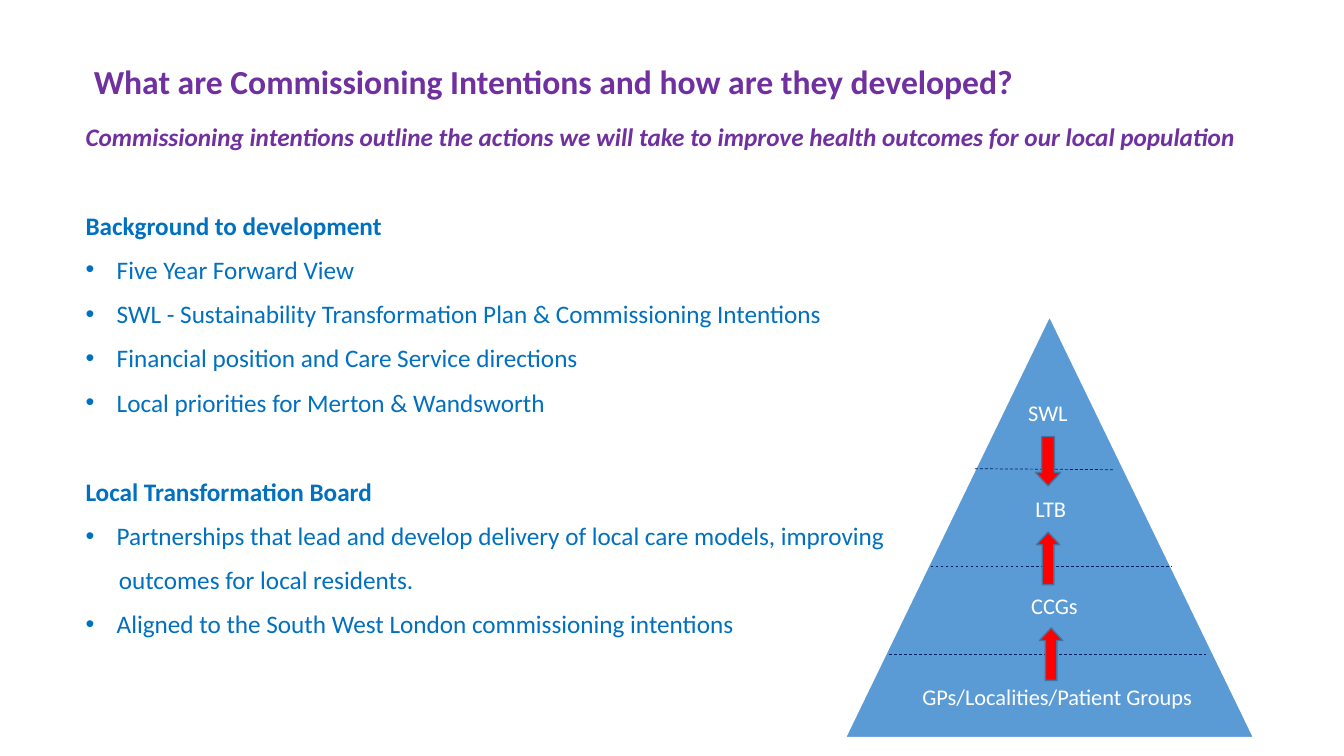
from lxml import etree
from pptx import Presentation
from pptx import util as u
from pptx.dml.color import RGBColor
from pptx.enum import dml, shapes, text
from pptx.oxml.ns import qn

FONT = "Calibri"
PURPLE, BLUE, WHITE = "7030A0", "0070C0", "FFFFFF"
NAVY, RED, EDGE, SKY = "002060", "FF0000", "43739E", "5B9BD5"

LEAD = ("Commissioning intentions outline the actions we will take "
        "to improve health outcomes for our local population")
# Style, wording
BODY = [
    ("lead", LEAD),
    ("head", "Background to development"),
    ("item", "Five Year Forward View"),
    ("item", "SWL - Sustainability Transformation Plan & Commissioning Intentions"),
    ("item", "Financial position and Care Service directions"),
    ("item", "Local priorities for Merton & Wandsworth"),
    ("head", "Local Transformation Board"),
    ("item", "Partnerships that lead and develop delivery of local care models, improving"),
    ("more", "outcomes for local residents."),
    ("item", "Aligned to the South West London commissioning intentions"),
]
# Style: left margin, first-line indent, space before
STYLES = {
    "lead": (0.25, 0, 10),
    "head": (0.25, 0, 42),
    "item": (0.56, -0.31, 10),
    "more": (0.58, 0, 10),
}

# Offsets from the pyramid's top left corner
TIERS = [  # label, left, top, width
    ("SWL", 1.72, 0.78, 0.6),
    ("LTB", 1.79, 1.73, 0.51),
    ("CCGs", 1.75, 2.7, 0.67),
    ("GPs/Localities/Patient Groups", 0.67, 3.6, 3.49),
]
CUTS = [  # left, top, right, bottom
    (1.29, 1.52, 2.67, 1.53),
    (0.85, 2.49, 3.24, 2.49),
    (0.44, 3.36, 3.58, 3.36),
]
ARROWS = [  # left, top, width, height, turn
    (1.89, 1.2, 0.25, 0.49, 0),
    (1.9, 2.15, 0.23, 0.52, 180),
    (1.93, 3.1, 0.23, 0.52, 180),
]


def tint(code):
    return RGBColor.from_string(code)


def inches(*nums):
    return [u.Inches(n) for n in nums]


def style(para, size, color, bold=False, italic=False):
    for run in para.runs:
        font = run.font
        font.name, font.size = FONT, u.Pt(size)
        font.bold, font.italic = bold, italic
        font.color.rgb = tint(color)


def add_title(slide, box):
    title = slide.shapes.title
    title.left, title.top, title.width, title.height = inches(*box)
    frame = title.text_frame
    frame.text = "What are Commissioning Intentions and how are they developed?"
    frame.vertical_anchor = text.MSO_ANCHOR.TOP
    frame.auto_size = text.MSO_AUTO_SIZE.NONE
    para = frame.paragraphs[0]
    para.alignment = text.PP_ALIGN.LEFT
    style(para, 24, PURPLE, bold=True)


def indent(para, margin, first, bullet):
    props = para._p.get_or_add_pPr()
    props.set("marL", str(u.Inches(margin)))
    props.set("indent", str(u.Inches(first)))
    if bullet:
        etree.SubElement(props, qn("a:buFont")).set("typeface", "Arial")
        etree.SubElement(props, qn("a:buChar")).set("char", "•")


def add_body(slide, box):
    frame = slide.shapes.add_textbox(*inches(*box)).text_frame
    frame.word_wrap = True
    for i, (kind, words) in enumerate(BODY):
        para = frame.add_paragraph() if i else frame.paragraphs[0]
        para.text = words
        margin, first, gap = STYLES[kind]
        para.space_before = u.Pt(gap)
        indent(para, margin, first, kind == "item")
        lead = kind == "lead"
        style(para, 18, PURPLE if lead else BLUE, lead or kind == "head", lead)


def add_block(slide, kind, box, fill, line, width):
    block = slide.shapes.add_shape(kind, *inches(*box))
    block.shadow.inherit = False
    block.fill.solid()
    block.fill.fore_color.rgb = tint(fill)
    block.line.color.rgb = tint(line)
    block.line.width = u.Pt(width)
    return block


def add_pyramid(slide, box):
    x, y = box[:2]
    kinds = shapes.MSO_SHAPE
    add_block(slide, kinds.FLOWCHART_EXTRACT, box, SKY, WHITE, 1.5)

    # Dashed dividers
    for left, top, right, bottom in CUTS:
        cut = slide.shapes.add_connector(
            shapes.MSO_CONNECTOR.STRAIGHT,
            *inches(x + left, y + top, x + right, y + bottom))
        cut.line.color.rgb = tint(NAVY)
        cut.line.width = u.Pt(0.5)
        cut.line.dash_style = dml.MSO_LINE.DASH
        etree.SubElement(cut._element.spPr, qn("a:effectLst"))

    # Tier labels
    for words, left, top, width in TIERS:
        label = slide.shapes.add_textbox(*inches(x + left, y + top, width, 0.37))
        frame = label.text_frame
        frame.word_wrap = False
        frame.text = words
        style(frame.paragraphs[0], 16, WHITE)

    # Arrows between tiers
    for left, top, width, height, turn in ARROWS:
        arrow = add_block(slide, kinds.DOWN_ARROW,
                          (x + left, y + top, width, height), RED, EDGE, 1)
        arrow.adjustments[1] = 0.54
        arrow.rotation = turn


def main():
    deck = Presentation()
    deck.slide_width, deck.slide_height = inches(13.33, 7.5)
    slide = deck.slides.add_slide(deck.slide_layouts[5])
    add_title(slide, (0.83, 0.55, 11.26, 0.81))
    add_body(slide, (0.5, 1.15, 12.17, 6.13))
    add_pyramid(slide, (8.38, 3.13, 4.06, 4.19))
    deck.save("out.pptx")


if __name__ == "__main__":
    main()
